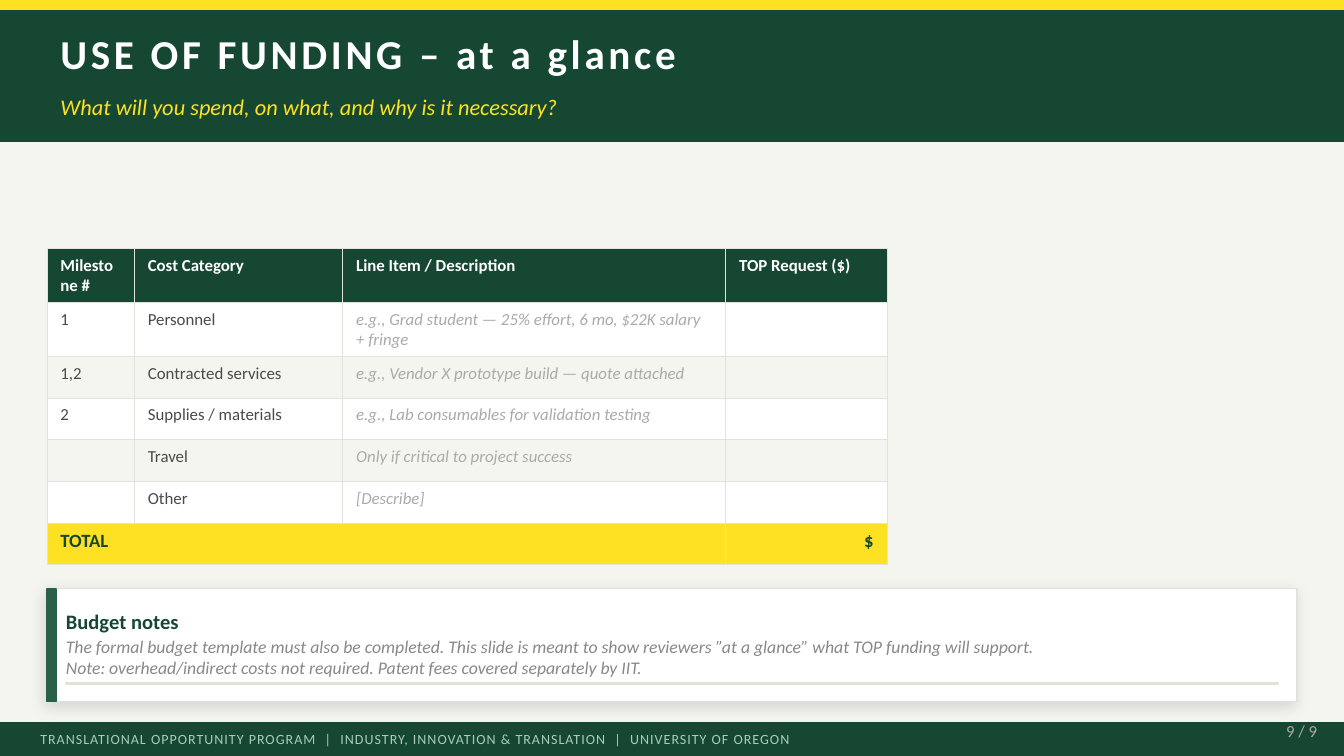
from lxml.etree import SubElement
from pptx import Presentation
from pptx.dml.color import RGBColor
from pptx.enum.shapes import MSO_SHAPE
from pptx.enum.text import MSO_ANCHOR, PP_ALIGN
from pptx.oxml.ns import qn
from pptx.util import Inches, Pt

COLORS = {
    "green": "154733",
    "accent": "2A6049",
    "yellow": "FEE123",
    "white": "FFFFFF",
    "paper": "F5F5F0",
    "rule": "E2E2DC",
    "body": "4A4A4A",
    "hint": "AAAAAA",
    "note": "888888",
    "footer": "AACCBB",
    "black": "000000",
}
COLUMN_WIDTHS = [0.65, 1.55, 2.85, 1.2]
ROW_HEIGHT = 0.31
HEADERS = ["Milestone #", "Cost Category", "Line Item / Description", "TOP Request ($)"]
BUDGET_ROWS = [
    ("1", "Personnel", "e.g., Grad student — 25% effort, 6 mo, $22K salary + fringe"),
    ("1,2", "Contracted services", "e.g., Vendor X prototype build — quote attached"),
    ("2", "Supplies / materials", "e.g., Lab consumables for validation testing"),
    ("", "Travel", "Only if critical to project success"),
    ("", "Other", "[Describe]"),
]
BUDGET_NOTES = [
    "The formal budget template must also be completed. This slide is meant to show "
    "reviewers ”at a glance” what TOP funding will support.",
    "Note: overhead/indirect costs not required. Patent fees covered separately by IIT.",
]


class SlideBuilder:
    """Holds the slide style and draws each kind of element."""

    font_name = "Calibri"

    def __init__(self, slide):
        self.slide = slide

    def color(self, name):
        return RGBColor.from_string(COLORS[name])

    def background(self, name):
        fill = self.slide.background.fill
        fill.solid()
        fill.fore_color.rgb = self.color(name)

    def rectangle(self, left, top, width, height, fill, line=None, line_width=1):
        shape = self.slide.shapes.add_shape(
            MSO_SHAPE.RECTANGLE, Inches(left), Inches(top), Inches(width), Inches(height))
        shape.shadow.inherit = False
        shape.fill.solid()
        shape.fill.fore_color.rgb = self.color(fill)
        shape.line.color.rgb = self.color(line or fill)
        shape.line.width = Pt(line_width)
        return shape

    def soft_shadow(self, shape):
        effects = shape._element.spPr.find(qn("a:effectLst"))
        shadow = SubElement(effects, qn("a:outerShdw"), blurRad=str(Pt(8)),
                            dist=str(Pt(3)), dir=str(135 * 60000), rotWithShape="0")
        tint = SubElement(shadow, qn("a:srgbClr"), val=COLORS["black"])
        SubElement(tint, qn("a:alpha"), val="12000")

    def run(self, paragraph, text, size, color, bold=False, italic=False, spacing=0):
        run = paragraph.add_run()
        run.text = text
        font = run.font
        font.name = self.font_name
        font.size = Pt(size)
        font.bold = bold
        font.italic = italic
        font.color.rgb = self.color(color)
        if spacing:
            run._r.get_or_add_rPr().set("spc", str(int(spacing * 100)))

    def text(self, left, top, width, height, lines, size, color,
             align=PP_ALIGN.LEFT, **style):
        box = self.slide.shapes.add_textbox(
            Inches(left), Inches(top), Inches(width), Inches(height))
        frame = box.text_frame
        frame.word_wrap = True
        frame.vertical_anchor = MSO_ANCHOR.MIDDLE
        frame.margin_left = frame.margin_right = 0
        frame.margin_top = frame.margin_bottom = 0
        for index, line in enumerate(lines):
            paragraph = frame.add_paragraph() if index else frame.paragraphs[0]
            paragraph.alignment = align
            self.run(paragraph, line, size, color, **style)

    def cell(self, cell, text, fill, size=9, color="body", align=PP_ALIGN.LEFT, **style):
        properties = cell._tc.get_or_add_tcPr()
        for side in ("a:lnL", "a:lnR", "a:lnT", "a:lnB"):
            border = SubElement(properties, qn(side), w=str(Pt(0.5)))
            solid = SubElement(border, qn("a:solidFill"))
            SubElement(solid, qn("a:srgbClr"), val=COLORS["rule"])
        cell.fill.solid()
        cell.fill.fore_color.rgb = self.color(fill)
        paragraph = cell.text_frame.paragraphs[0]
        paragraph.alignment = align
        if text:
            self.run(paragraph, text, size, color, **style)
        else:
            SubElement(paragraph._p, qn("a:endParaRPr"), sz=str(size * 100))

    def budget_table(self, left, top):
        row_count = len(BUDGET_ROWS) + 2
        table = self.slide.shapes.add_table(
            row_count, len(COLUMN_WIDTHS), Inches(left), Inches(top),
            Inches(sum(COLUMN_WIDTHS)), Inches(ROW_HEIGHT * row_count)).table
        for column, width in zip(table.columns, COLUMN_WIDTHS):
            column.width = Inches(width)
        for row in table.rows:
            row.height = Inches(ROW_HEIGHT)
        for index, header in enumerate(HEADERS):
            self.cell(table.cell(0, index), header, "green", color="white", bold=True)
        for row, (milestone, category, description) in enumerate(BUDGET_ROWS, 1):
            fill = "white" if row % 2 else "paper"
            self.cell(table.cell(row, 0), milestone, fill)
            self.cell(table.cell(row, 1), category, fill)
            self.cell(table.cell(row, 2), description, fill, color="hint", italic=True)
            self.cell(table.cell(row, 3), "", fill)
        total = row_count - 1
        table.cell(total, 0).merge(table.cell(total, 2))
        for index, text in enumerate(["TOTAL", "", "", "$"]):
            align = PP_ALIGN.RIGHT if text == "$" else PP_ALIGN.LEFT
            self.cell(table.cell(total, index), text, "yellow", 10, "green", align, bold=True)


def main():
    presentation = Presentation()
    presentation.slide_width = Inches(10)
    presentation.slide_height = Inches(10) * 9 // 16
    builder = SlideBuilder(presentation.slides.add_slide(presentation.slide_layouts[6]))
    builder.background("paper")

    builder.rectangle(0, 0, 10, 1.05, "green")
    builder.rectangle(0, 0, 10, 0.07, "yellow")
    builder.text(0.45, 0.12, 8.5, 0.55, ["USE OF FUNDING – at a glance"],
                 22, "white", bold=True, spacing=2)
    builder.text(0.45, 0.62, 8.5, 0.35,
                 ["What will you spend, on what, and why is it necessary?"],
                 12, "yellow", italic=True)

    builder.rectangle(0, 5.38, 10, 0.24, "green")
    departments = ["TRANSLATIONAL OPPORTUNITY PROGRAM",
                   "INDUSTRY, INNOVATION & TRANSLATION", "UNIVERSITY OF OREGON"]
    builder.text(0.3, 5.38, 9, 0.24, ["  |  ".join(departments)], 7.5, "footer", spacing=0.5)
    builder.text(8.9, 5.33, 0.9, 0.22, ["9 / 9"], 9, "hint", PP_ALIGN.RIGHT)

    builder.budget_table(0.35, 1.85)

    card = builder.rectangle(0.35, 4.38, 9.3, 0.84, "white", "rule", 0.75)
    builder.soft_shadow(card)
    builder.rectangle(0.35, 4.38, 0.07, 0.84, "accent")
    builder.text(0.49, 4.48, 9.05, 0.28, ["Budget notes"], 11, "green", bold=True)
    builder.text(0.49, 4.74, 9.05, 0.29, BUDGET_NOTES, 9.5, "note", italic=True)
    builder.rectangle(0.49, 5.08, 9.02, 0.01, "rule")

    presentation.save("out.pptx")


if __name__ == "__main__":
    main()
